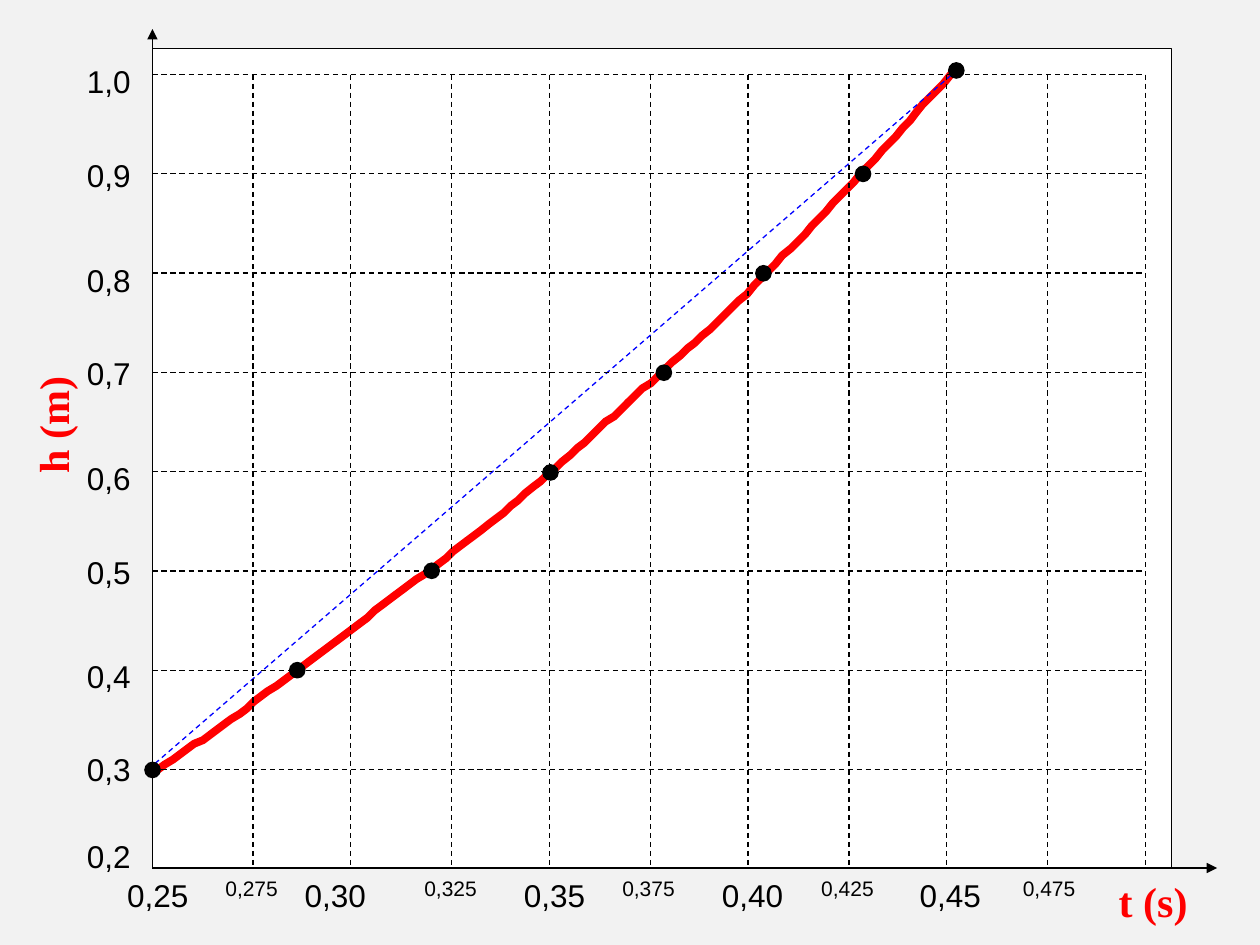
from lxml.etree import SubElement
from pptx import Presentation
from pptx.dml.color import RGBColor
from pptx.enum.dml import MSO_LINE
from pptx.enum.shapes import MSO_CONNECTOR, MSO_SHAPE
from pptx.enum.text import MSO_AUTO_SIZE
from pptx.oxml.ns import qn
from pptx.util import Pt

HUES = {"back": "F2F2F2", "plot": "FFFFFF", "ink": "000000",
        "curve": "FF0000", "chord": "0000FF"}

# Height labels with their tops, time labels with their lefts
HEIGHTS = [("1,0", 31.7), ("0,9", 85.7), ("0,8", 145.4), ("0,7", 198.7),
           ("0,6", 258.5), ("0,5", 312.5), ("0,4", 372.2), ("0,3", 424.8),
           ("0,2", 474.5)]
TIMES = [("0,25", 65.5), ("0,30", 167), ("0,35", 292.3), ("0,40", 405.4),
         ("0,45", 518.4)]
MINOR = [("0,275", 121.7), ("0,325", 235.4), ("0,375", 348.5),
         ("0,425", 462.2), ("0,475", 577.4)]

# Centres of the measured points
DOTS = [(87.2, 440), (169.9, 383), (246.7, 326.2), (314.6, 270), (379.4, 213),
        (436.3, 156.2), (493.2, 99.4), (546.5, 40.3)]

# Bezier curve: start, then two handles and an end for each part
START = (546.5, 38.9)
PARTS = [
    ((526.3, 61.9), (505.4, 85), (483.8, 108)),
    ((463, 130.3), (440.6, 154.1), (418.3, 175.7)),
    ((396, 197.3), (373, 217.4), (350.6, 237.6)),
    ((328.3, 257.8), (306, 277.9), (283.7, 295.9)),
    ((261.4, 313.9), (239.8, 329.8), (218.2, 346.3)),
    ((196.6, 362.9), (175.7, 379.4), (153.4, 395.3)),
    ((131, 411.8), (108.7, 427.7), (85.7, 442.8)),
]

LEFT, BASE, TOP, RIGHT = 87.1, 496, 42.6, 654
ROW, COL, DOT = 56.75, 113.5, 8.8

deck = Presentation()
deck.slide_width, deck.slide_height = Pt(720), Pt(540)
slide = deck.slides.add_slide(deck.slide_layouts[6])
shapes = slide.shapes


def tint(name):
    return RGBColor.from_string(HUES[name])


def paint(fill, name):
    fill.solid()
    fill.fore_color.rgb = tint(name)


def stroke(item, name, width):
    item.line.color.rgb = tint(name)
    item.line.width = Pt(width)


def solid(kind, box, fill, width):
    item = shapes.add_shape(kind, *map(Pt, box))
    item.shadow.inherit = False
    paint(item.fill, fill)
    stroke(item, "ink", width)


def rule(x1, y1, x2, y2, name="ink", dash=False, arrow=False):
    line = shapes.add_connector(MSO_CONNECTOR.STRAIGHT,
                                Pt(x1), Pt(y1), Pt(x2), Pt(y2))
    stroke(line, name, 0.75)
    if dash:
        line.line.dash_style = MSO_LINE.DASH
    if arrow:
        SubElement(line.line._get_or_add_ln(), qn("a:tailEnd"), type="triangle")
    SubElement(line._element.spPr, qn("a:effectLst"))


def label(text, x, y, wide=78.5, high=28.8, size=18, title=False, turn=0):
    box = shapes.add_textbox(Pt(x), Pt(y), Pt(wide), Pt(high))
    box.rotation = turn
    frame = box.text_frame
    frame.word_wrap = True
    frame.auto_size = MSO_AUTO_SIZE.SHAPE_TO_FIT_TEXT
    frame.text = text
    para = frame.paragraphs[0]
    space = SubElement(para._p.get_or_add_pPr(), qn("a:spcBef"))
    SubElement(space, qn("a:spcPct"), val="50000")
    font = para.runs[0].font
    font.name = "Times New Roman" if title else "Arial"
    font.size, font.bold = Pt(size), title
    font.color.rgb = tint("curve" if title else "ink")


def trace(start, parts, steps=16):
    for one, two, end in parts:
        for step in range(1, steps + 1):
            t = step / steps
            u = 1 - t
            yield tuple(u**3 * a + 3*u*u*t * b + 3*u*t*t * c + t**3 * d
                        for a, b, c, d in zip(start, one, two, end))
        start = end


# Background and plot area
paint(slide.background.fill, "back")
solid(MSO_SHAPE.RECTANGLE, (LEFT, 27.4, 582.5, 468.7), "plot", 0.5)

# Measured curve
pen = shapes.build_freeform(*START, scale=Pt(1))
pen.add_line_segments(trace(START, PARTS), close=False)
curve = pen.convert_to_shape()
curve.shadow.inherit = False
curve.fill.background()
stroke(curve, "curve", 4.5)

# Axes and straight chord
rule(LEFT, BASE, 695.5, BASE, arrow=True)
rule(LEFT, BASE, LEFT, 16.6, arrow=True)
rule(88.6, 436.3, 545.8, 41, "chord", dash=True)

# Grid
for row in range(8):
    y = TOP + row * ROW
    rule(LEFT, y, RIGHT, y, dash=True)
for first in (144.6, 200.4):
    for col in range(5):
        x = first + col * COL
        rule(x, TOP, x, BASE, dash=True)

# Points
for x, y in DOTS:
    solid(MSO_SHAPE.OVAL, (x - DOT / 2, y - DOT / 2, DOT, DOT), "ink", 0.75)

# Scale labels and axis titles
for text, y in HEIGHTS:
    label(text, 42.5, y)
for text, x in TIMES:
    label(text, x, 496.8)
for text, x in MINOR:
    label(text, x, 496.8, high=21.6, size=12)
label("h (m)", -11.5, 218.2, 82.8, 36, 24, title=True, turn=270)
label("t (s)", 632.2, 496.8, 76.3, 36, 24, title=True)

deck.save("out.pptx")
